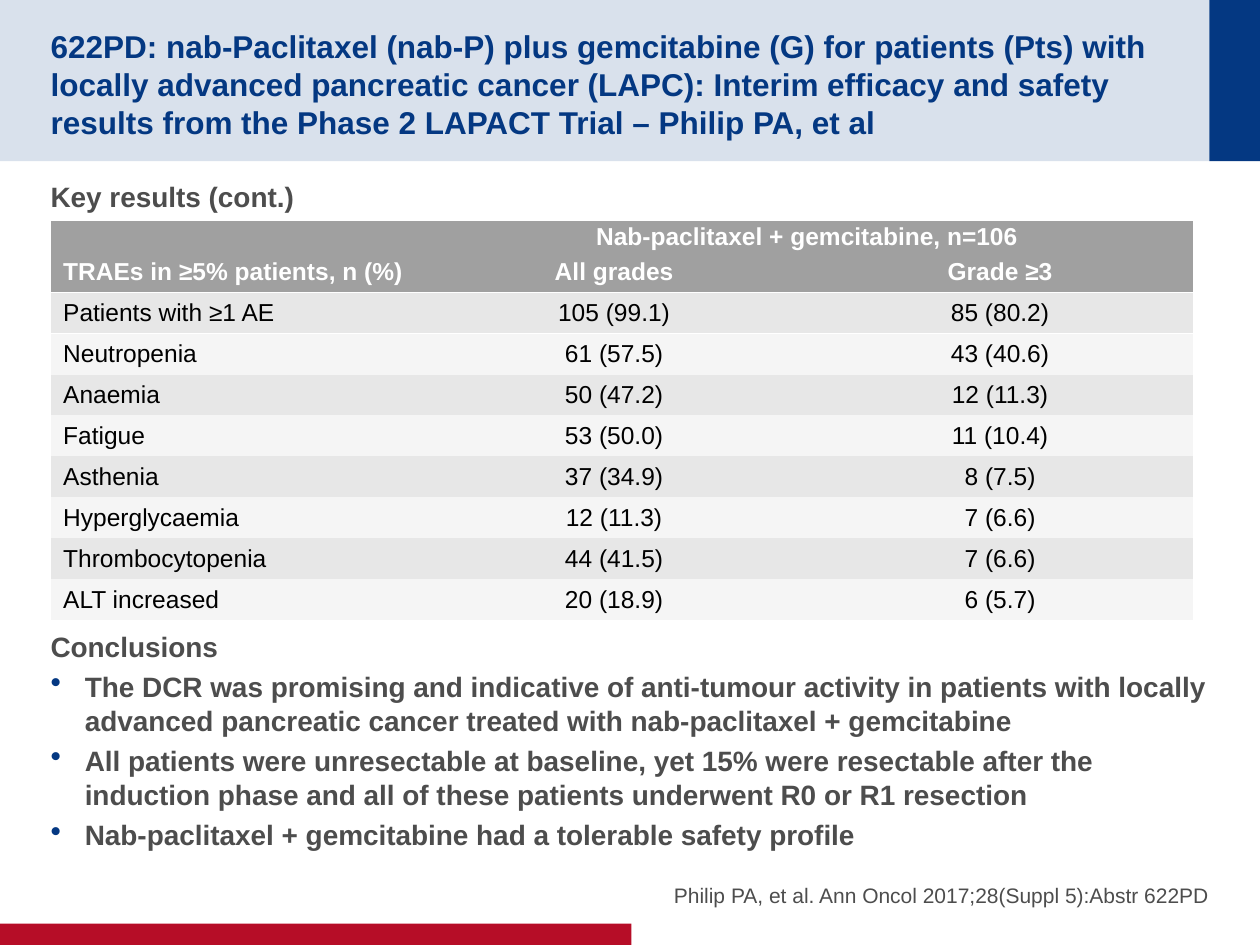
from dataclasses import dataclass

from pptx import Presentation
from pptx.dml.color import RGBColor
from pptx.enum import shapes, text
from pptx.oxml import ns, parse_xml
from pptx.util import Cm, Pt


@dataclass(frozen=True)
class Theme:
    """Colours, font and type sizes of the deck."""
    font: str = "Arial"
    navy: str = "043882"
    pale: str = "D9E1EC"
    red: str = "B60D27"
    ink: str = "4D4D4D"
    black: str = "000000"
    white: str = "FFFFFF"
    head: str = "A0A0A0"
    bands: tuple = ("E7E7E7", "F5F5F5")
    title_size: int = 18
    body_size: int = 16
    table_size: int = 14
    source_size: int = 12


THEME = Theme()
NO_GRID_STYLE = "{2D5ABB26-0587-4C30-8999-92F81FD0307C}"
TITLE = ("622PD: nab-Paclitaxel (nab-P) plus gemcitabine (G) for patients (Pts) with "
         "locally advanced pancreatic cancer (LAPC): Interim efficacy and safety "
         "results from the Phase 2 LAPACT Trial – Philip PA, et al")
CONCLUSIONS = [
    "The DCR was promising and indicative of anti-tumour activity in patients with "
    "locally advanced pancreatic cancer treated with nab-paclitaxel + gemcitabine",
    "All patients were unresectable at baseline, yet 15% were resectable after the "
    "induction phase and all of these patients underwent R0 or R1 resection",
    "Nab-paclitaxel + gemcitabine had a tolerable safety profile",
]
SOURCE = "Philip PA, et al. Ann Oncol 2017;28(Suppl 5):Abstr 622PD"
HEADER = [
    ("TRAEs in ≥5% patients, n (%)", "Nab-paclitaxel + gemcitabine, n=106", ""),
    ("", "All grades", "Grade ≥3"),
]
EVENTS = [
    ("Patients with ≥1 AE", "105 (99.1)", "85 (80.2)"),
    ("Neutropenia", "61 (57.5)", "43 (40.6)"),
    ("Anaemia", "50 (47.2)", "12 (11.3)"),
    ("Fatigue", "53 (50.0)", "11 (10.4)"),
    ("Asthenia", "37 (34.9)", "8 (7.5)"),
    ("Hyperglycaemia", "12 (11.3)", "7 (6.6)"),
    ("Thrombocytopenia", "44 (41.5)", "7 (6.6)"),
    ("ALT increased", "20 (18.9)", "6 (5.7)"),
]


def style_para(para, size, color, bold=False, align=text.PP_ALIGN.LEFT):
    """Format a paragraph and its runs."""
    para.alignment = align
    for span in para.runs:
        span.font.name = THEME.font
        span.font.size = Pt(size)
        span.font.bold = bold
        span.font.color.rgb = RGBColor.from_string(color)


def set_frame(frame, anchor, top=0, bottom=0):
    """Wrap a text frame and set its anchor and insets."""
    frame.word_wrap = True
    frame.auto_size = text.MSO_AUTO_SIZE.NONE
    frame.vertical_anchor = anchor
    frame.margin_left = frame.margin_right = 0
    frame.margin_top, frame.margin_bottom = Cm(top), Cm(bottom)


def add_bar(page, left, top, width, height, color):
    """Add a plain filled rectangle."""
    bar = page.shapes.add_shape(shapes.MSO_SHAPE.RECTANGLE,
                                Cm(left), Cm(top), Cm(width), Cm(height))
    bar.shadow.inherit = False
    bar.fill.solid()
    bar.fill.fore_color.rgb = RGBColor.from_string(color)
    bar.line.fill.background()


def add_bullet(para):
    """Give a paragraph a navy bullet and a hanging indent."""
    props = para._p.get_or_add_pPr()
    props.set("marL", str(Cm(0.69)))
    props.set("indent", str(-Cm(0.69)))
    for xml in (f'<a:buClr {ns.nsdecls("a")}><a:srgbClr val="{THEME.navy}"/></a:buClr>',
                f'<a:buSzPct {ns.nsdecls("a")} val="110000"/>',
                f'<a:buChar {ns.nsdecls("a")} char="•"/>'):
        props.append(parse_xml(xml))


def add_title_band(page, left, top, width, height):
    """Build the title band with its navy end block."""
    block = 1.02
    add_bar(page, left, top, width - block, height, THEME.pale)
    add_bar(page, left + width - block, top, block, height, THEME.navy)
    title = page.shapes.title
    title.element.getparent().append(title.element)
    title.left, title.top = Cm(left + 1.02), Cm(top + 0.51)
    title.width, title.height = Cm(22.89), Cm(height - 1.02)
    title.text_frame.text = TITLE
    set_frame(title.text_frame, text.MSO_ANCHOR.MIDDLE, top=0.13)
    style_para(title.text_frame.paragraphs[0], THEME.title_size, THEME.navy, bold=True)


def add_body(page, left, top, width, height):
    """Write both headings and the conclusions around the table."""
    box = page.shapes.add_textbox(Cm(left), Cm(top), Cm(width), Cm(height))
    frame = box.text_frame
    frame.text = "\n".join(["Key results (cont.)", "Conclusions", *CONCLUSIONS])
    set_frame(frame, text.MSO_ANCHOR.TOP, 0.13, 0.13)
    for para in frame.paragraphs:
        style_para(para, THEME.body_size, THEME.ink, bold=True)
        para.space_before, para.space_after = Pt(0), Pt(4)
    frame.paragraphs[1].space_before = Pt(234)
    for para in frame.paragraphs[2:]:
        add_bullet(para)


def add_border(cell, side):
    """Draw a white rule on one side of a cell."""
    cell._tc.get_or_add_tcPr().insert(0, parse_xml(
        f'<a:{side} {ns.nsdecls("a")} w="12700"><a:solidFill>'
        f'<a:srgbClr val="{THEME.white}"/></a:solidFill></a:{side}>'))


def fill_cell(cell, wording, is_head, band, align):
    """Write and format one table cell."""
    cell.text = wording
    cell.margin_top = cell.margin_bottom = Cm(0.13)
    cell.vertical_anchor = text.MSO_ANCHOR.BOTTOM if is_head else text.MSO_ANCHOR.MIDDLE
    cell.fill.solid()
    cell.fill.fore_color.rgb = RGBColor.from_string(band)
    para = cell.text_frame.paragraphs[0]
    para.line_spacing = Pt(13 if is_head else 16)
    style_para(para, THEME.table_size, THEME.white if is_head else THEME.black, is_head, align)


def add_events_table(page, left, top, width, height):
    """Build the adverse event table with its two-row header."""
    rows = HEADER + EVENTS
    heads = len(HEADER)
    head_height = 0.71
    row_height = (height - heads * head_height) / len(EVENTS)
    holder = page.shapes.add_table(len(rows), 3, Cm(left), Cm(top), Cm(width), Cm(height))
    holder.element.find(".//" + ns.qn("a:tableStyleId")).text = NO_GRID_STYLE
    table = holder.table
    first = 7.47
    for column, size in zip(table.columns, (first, (width - first) / 2, (width - first) / 2)):
        column.width = Cm(size)
    for r, row in enumerate(rows):
        is_head = r < heads
        table.rows[r].height = Cm(head_height if is_head else row_height)
        band = THEME.head if is_head else THEME.bands[(r - heads) % 2]
        for c, wording in enumerate(row):
            align = text.PP_ALIGN.CENTER if c else text.PP_ALIGN.LEFT
            fill_cell(table.cell(r, c), wording, is_head, band, align)
    table.cell(0, 0).merge(table.cell(1, 0))
    table.cell(0, 1).merge(table.cell(0, 2))
    for c in range(3):
        add_border(table.cell(0 if c == 0 else 1, c), "lnB")
        add_border(table.cell(heads, c), "lnT")


def add_source(page, left, top, width, height):
    """Write the citation at the lower right."""
    box = page.shapes.add_textbox(Cm(left), Cm(top), Cm(width), Cm(height))
    box.text_frame.text = SOURCE
    set_frame(box.text_frame, text.MSO_ANCHOR.BOTTOM)
    para = box.text_frame.paragraphs[0]
    para.space_after = Pt(4)
    style_para(para, THEME.source_size, THEME.ink, align=text.PP_ALIGN.RIGHT)


def main():
    """Build and save the deck."""
    deck = Presentation()
    deck.slide_width, deck.slide_height = Cm(25.4), Cm(19.05)
    page = deck.slides.add_slide(deck.slide_layouts.get_by_name("Title Only"))
    add_title_band(page, 0, 0, 25.4, 3.25)
    add_bar(page, 0, 18.62, 12.73, 0.43, THEME.red)
    add_body(page, 1.02, 3.48, 23.37, 13.18)
    add_source(page, 12.9, 16.94, 11.48, 1.35)
    add_events_table(page, 1.02, 4.46, 23.03, 7.98)
    deck.save("out.pptx")


if __name__ == "__main__":
    main()
